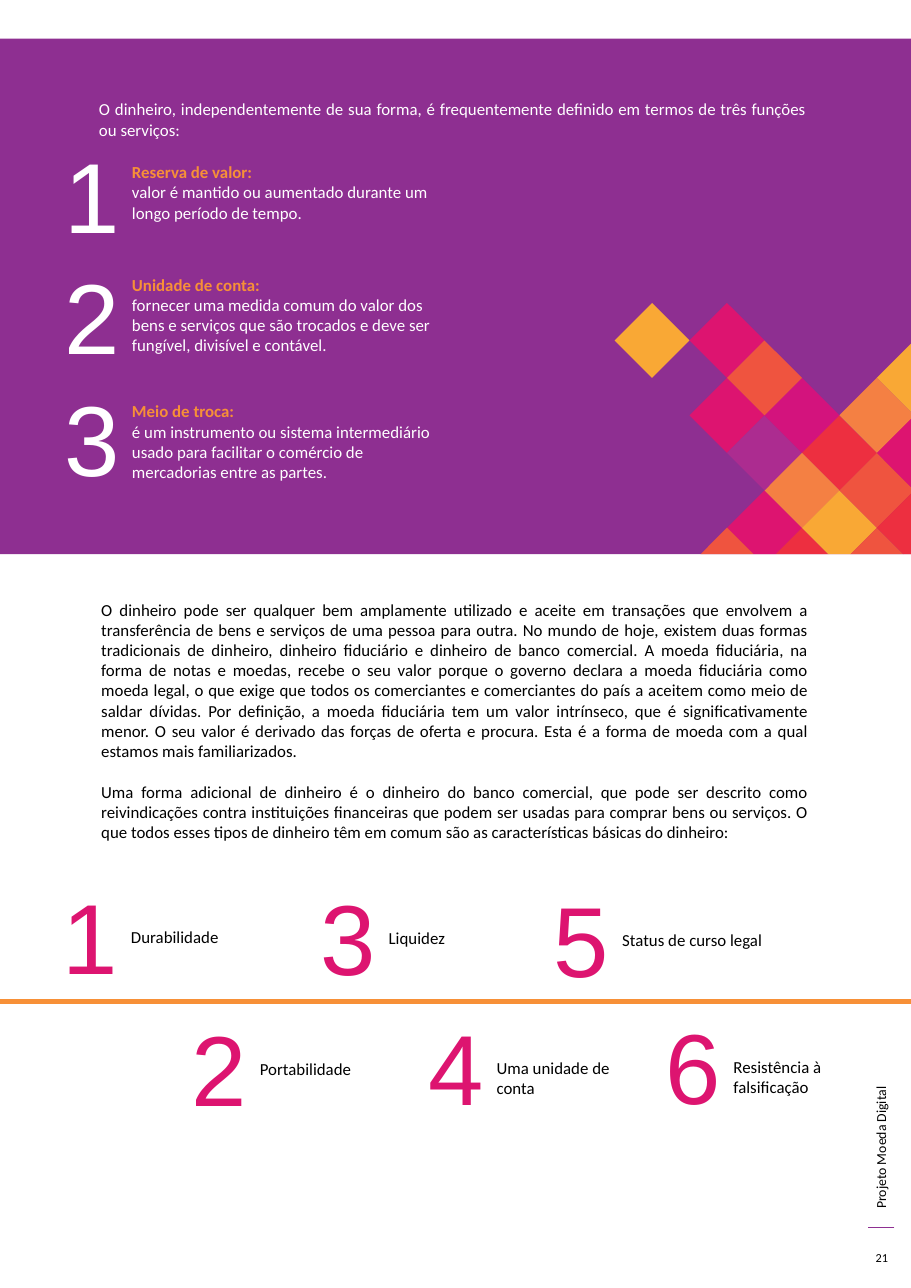
"""Build a page on the functions and characteristics of money."""
import pptx
import pptx.util
import pptx.dml.color
import pptx.enum.shapes
import pptx.enum.text
import pptx.oxml

Inches = pptx.util.Inches
Align = pptx.enum.text.PP_ALIGN

PAGE_WIDTH, PAGE_HEIGHT = 8.27, 11.69
BAND_TOP, BAND_HEIGHT = 0.35, 4.68
BAND_BOTTOM = BAND_TOP + BAND_HEIGHT

THEME = {
    "body_font": "Calibri", "number_font": "Arial",
    "body_size": 11, "number_size": 65, "footer_size": 9, "page_size": 8,
    "white": "FFFFFF", "black": "000000", "purple": "8E2F91", "orange": "F79037",
    "pink": "DD1470", "amber": "F9A835", "coral": "EF543F", "red": "ED2F40",
    "peach": "F48043", "plum": "AC2C90", "magenta": "D3137D",
}

INTRO = "O dinheiro, independentemente de sua forma, é frequentemente definido em termos de três funções ou serviços:"

FUNCTIONS = [
    ("Reserva de valor:", "valor é mantido ou aumentado durante um longo período de tempo.", 1.42, 0.69),
    ("Unidade de conta:", "fornecer uma medida comum do valor dos bens e serviços que são trocados "
     "e deve ser fungível, divisível e contável.", 2.44, 0.69),
    ("Meio de troca:", "é um instrumento ou sistema intermediário usado para facilitar o comércio "
     "de mercadorias entre as partes.", 3.59, 0.98),
]

BODY = [
    "O dinheiro pode ser qualquer bem amplamente utilizado e aceite em transações que envolvem a "
    "transferência de bens e serviços de uma pessoa para outra. No mundo de hoje, existem duas formas "
    "tradicionais de dinheiro, dinheiro fiduciário e dinheiro de banco comercial. A moeda fiduciária, na "
    "forma de notas e moedas, recebe o seu valor porque o governo declara a moeda fiduciária como moeda "
    "legal, o que exige que todos os comerciantes e comerciantes do país a aceitem como meio de saldar "
    "dívidas. Por definição, a moeda fiduciária tem um valor intrínseco, que é significativamente menor. "
    "O seu valor é derivado das forças de oferta e procura. Esta é a forma de moeda com a qual estamos "
    "mais familiarizados.",
    "Uma forma adicional de dinheiro é o dinheiro do banco comercial, que pode ser descrito como "
    "reivindicações contra instituições financeiras que podem ser usadas para comprar bens ou serviços. "
    "O que todos esses tipos de dinheiro têm em comum são as características básicas do dinheiro:",
]

CHARACTERISTICS = [
    ("Durabilidade", 0.47, 7.89, 1.15),
    ("Portabilidade", 1.64, 9.09, 1.15),
    ("Liquidez", 2.81, 7.9, 1.15),
    ("Uma unidade de conta", 3.79, 9.08, 1.43),
    ("Status de curso legal", 4.93, 7.92, 1.64),
    ("Resistência à falsificação", 5.94, 9.07, 1.15),
]

FOOTER, PAGE_NUMBER = "Projeto Moeda Digital", "21"

GRID_LEFT, GRID_TOP, GRID_STEP = 5.58, 2.75, 0.34
DIAMONDS = [
    (5, 7, "red"), (4, 6, "pink"), (3, 7, "coral"), (6, 6, "amber"), (7, 5, "coral"),
    (6, 4, "red"), (5, 5, "peach"), (8, 4, "pink"), (8, 2, "amber"), (7, 3, "peach"),
    (1, 1, "amber"), (3, 1, "pink"), (3, 3, "pink"), (4, 4, "plum"), (5, 3, "magenta"),
    (4, 2, "coral"), (7, 7, "coral"), (8, 6, "red"),
]


def color(name):
    return pptx.dml.color.RGBColor.from_string(THEME[name])


def add_text(page, texts, left, top, width, height, ink="black", size="body_size",
             font="body_font", align=Align.LEFT, gap=0):
    box = page.shapes.add_textbox(Inches(left), Inches(top), Inches(width), Inches(height))
    frame = box.text_frame
    frame.word_wrap = True
    frame.text = "\n".join(texts)
    for para in frame.paragraphs:
        para.alignment = align
        span = para.runs[0]
        span.font.name = THEME[font]
        span.font.size = pptx.util.Pt(THEME[size])
        span.font.color.rgb = color(ink)
    for para in frame.paragraphs[:-1]:
        para.space_after = pptx.util.Pt(gap)
    return box


def add_number(page, number, left, top, ink):
    add_text(page, [str(number)], left, top, 0.72, 1.19, ink, "number_size", "number_font")


def add_line(page, start, end, ink, weight):
    line = page.shapes.add_connector(pptx.enum.shapes.MSO_CONNECTOR.STRAIGHT,
                                     *(Inches(value) for value in start + end))
    line.line.color.rgb = color(ink)
    line.line.width = pptx.util.Pt(weight)
    effects = pptx.oxml.parse_xml(
        '<a:effectLst xmlns:a="http://schemas.openxmlformats.org/drawingml/2006/main"/>')
    line._element.spPr.append(effects)


def paint(shape, ink):
    shape.shadow.inherit = False
    shape.fill.solid()
    shape.fill.fore_color.rgb = color(ink)
    shape.line.fill.background()


def clip(points, axis, limit):
    kept = []
    for start, end in zip(points, points[1:] + points[:1]):
        if start[axis] <= limit:
            kept.append(start)
        if (start[axis] <= limit) != (end[axis] <= limit):
            share = (limit - start[axis]) / (end[axis] - start[axis])
            kept.append(tuple(a + share * (b - a) for a, b in zip(start, end)))
    return kept


def add_diamond(page, column, row, ink):
    x, y = GRID_LEFT + column * GRID_STEP, GRID_TOP + row * GRID_STEP
    corners = [(x, y - GRID_STEP), (x + GRID_STEP, y), (x, y + GRID_STEP), (x - GRID_STEP, y)]
    visible = clip(clip(corners, 0, PAGE_WIDTH), 1, BAND_BOTTOM)
    if visible == corners:
        shape = page.shapes.add_shape(
            pptx.enum.shapes.MSO_SHAPE.DIAMOND, Inches(x - GRID_STEP), Inches(y - GRID_STEP),
            Inches(2 * GRID_STEP), Inches(2 * GRID_STEP))
    else:
        points = [(Inches(a), Inches(b)) for a, b in visible]
        builder = page.shapes.build_freeform(*points[0])
        builder.add_line_segments(points[1:], close=True)
        shape = builder.convert_to_shape()
    paint(shape, ink)


def main():
    deck = pptx.Presentation()
    deck.slide_width, deck.slide_height = Inches(PAGE_WIDTH), Inches(PAGE_HEIGHT)
    page = deck.slides.add_slide(deck.slide_layouts[6])

    band = page.shapes.add_shape(pptx.enum.shapes.MSO_SHAPE.RECTANGLE, 0, Inches(BAND_TOP),
                                 Inches(PAGE_WIDTH), Inches(BAND_HEIGHT))
    paint(band, "purple")
    for diamond in DIAMONDS:
        add_diamond(page, *diamond)

    add_text(page, [INTRO], 0.8, 0.85, 6.62, 0.58, "white", align=Align.JUSTIFY)
    for index, (title, detail, top, height) in enumerate(FUNCTIONS):
        add_number(page, index + 1, 0.49, 1.17 + 1.1 * index, "white")
        box = add_text(page, [title, detail], 1.1, top, 3, height, "white")
        heading = box.text_frame.paragraphs[0].runs[0].font
        heading.bold = True
        heading.color.rgb = color("orange")

    add_text(page, BODY, 0.82, 5.39, 6.62, 2.5, align=Align.JUSTIFY, gap=13.2)

    add_line(page, (0, 9.09), (PAGE_WIDTH, 9.09), "orange", 3)
    for number, (label, left, top, width) in enumerate(CHARACTERISTICS, 1):
        add_number(page, number, left, top, "pink")
        add_text(page, [label], left + 0.62, top + 0.47, width, 0.29)

    footer = add_text(page, [FOOTER], 6.26, 9.21, 3.47, 0.25, size="footer_size")
    footer.rotation = 270
    add_line(page, (8.12, 11.14), (7.88, 11.14), "purple", 0.75)
    folio = add_text(page, [PAGE_NUMBER], 7.8, 11.16, 0.41, 0.51, size="page_size", align=Align.CENTER)
    folio.text_frame.vertical_anchor = pptx.enum.text.MSO_ANCHOR.MIDDLE

    deck.save("out.pptx")


if __name__ == "__main__":
    main()
